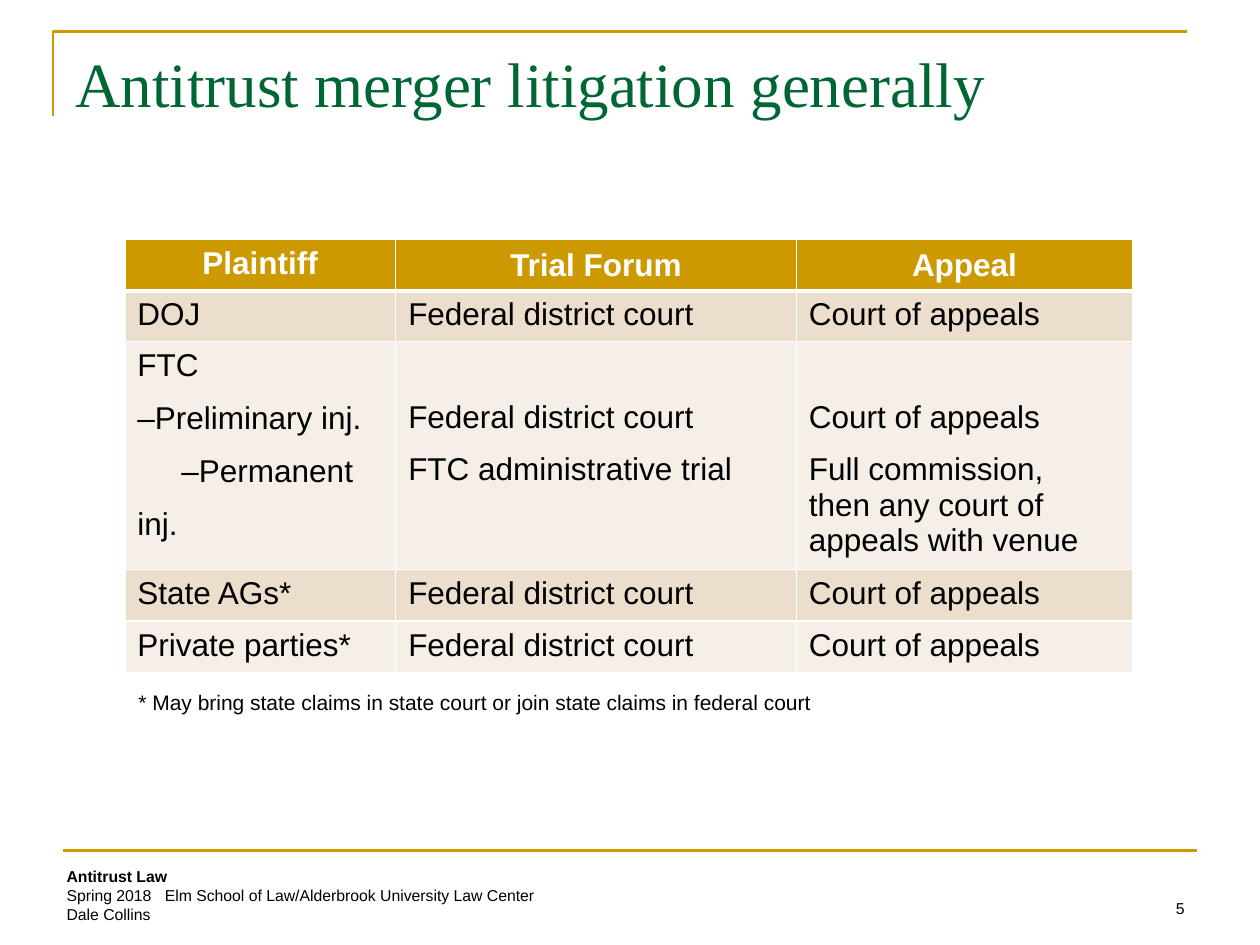
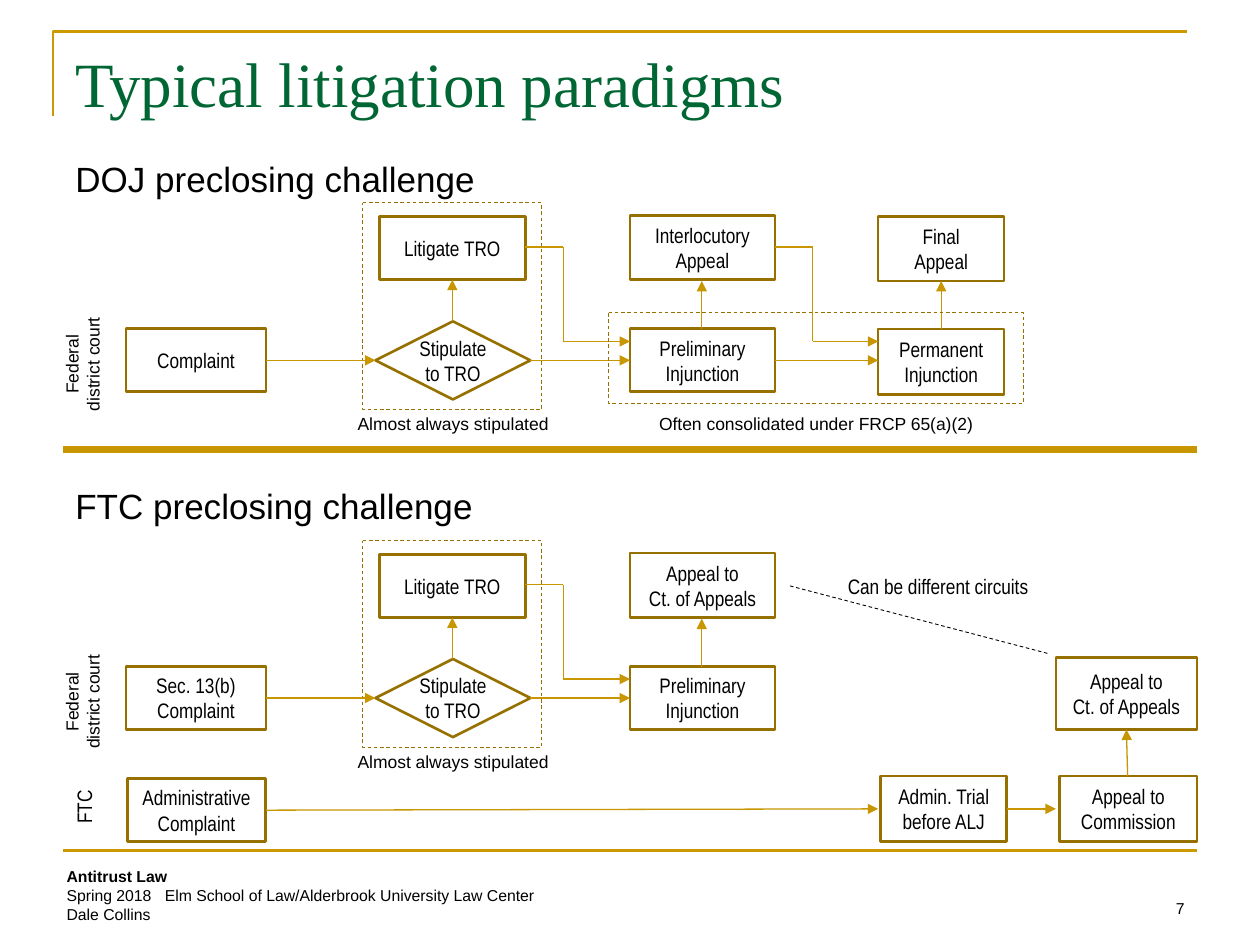
from itertools import pairwise

from lxml import etree
from pptx import Presentation
from pptx.dml.color import RGBColor
from pptx.enum.dml import MSO_LINE
from pptx.enum.shapes import MSO_CONNECTOR, MSO_SHAPE
from pptx.enum.text import MSO_ANCHOR, PP_ALIGN
from pptx.oxml.ns import qn
from pptx.util import Inches, Pt

GOLD = RGBColor(0xCC, 0x99, 0x00)
ARROW_GOLD = RGBColor(0xC8, 0x96, 0x00)
DARK_GOLD = RGBColor(0x97, 0x71, 0x00)
GREEN = RGBColor(0x00, 0x66, 0x33)
BLACK = RGBColor(0x00, 0x00, 0x00)
WHITE = RGBColor(0xFF, 0xFF, 0xFF)
BANDS = (RGBColor(0xEC, 0xDE, 0xCC), RGBColor(0xF6, 0xEF, 0xE7))

BODY = {"name": "Arial", "size": Pt(18), "color": BLACK, "bold": False}
TITLE = BODY | {"name": "Times New Roman", "size": Pt(36), "color": GREEN}
TABLE_HEAD = BODY | {"color": WHITE, "bold": True}
HEADING = BODY | {"size": Pt(20)}
FOOTNOTE = BODY | {"size": Pt(12)}
CAPTION = BODY | {"size": Pt(10)}
FOOTER = BODY | {"size": Pt(9)}
STEP = FOOTNOTE | {"name": "Arial Narrow"}

COURT, APPEALS = "Federal district court", "Court of appeals"
APPEAL_TO_COURT = "Appeal to\vCt. of Appeals"


def add_sub(parent, tag, **attributes):
    return etree.SubElement(parent, qn(tag), {key: str(value) for key, value in attributes.items()})


def write_span(para, text, style):
    """Write text in a paragraph; a vertical tab breaks the line."""
    for index, piece in enumerate(text.split("\v")):
        if index:
            para.add_line_break()
        span = para.add_run()
        span.text = piece
        for name, value in style.items():
            if name == "color":
                span.font.color.rgb = value
            else:
                setattr(span.font, name, value)


def add_text(slide, text, at, style, align=PP_ALIGN.LEFT, anchor=MSO_ANCHOR.TOP, wrap=True, rotation=0):
    box = slide.shapes.add_textbox(*map(Inches, at))
    box.rotation = rotation
    frame = box.text_frame
    frame.word_wrap = wrap
    frame.vertical_anchor = anchor
    frame.paragraphs[0].alignment = align
    write_span(frame.paragraphs[0], text, style)
    return box


def add_line(slide, start, end, color=ARROW_GOLD, width=0.75, arrow=False, dashed=False):
    line = slide.shapes.add_connector(MSO_CONNECTOR.STRAIGHT, *map(Inches, start + end))
    line.line.color.rgb = color
    line.line.width = Pt(width)
    if dashed:
        line.line.dash_style = MSO_LINE.DASH
    if arrow:
        add_sub(line.line._get_or_add_ln(), "a:tailEnd", type="triangle")
    add_sub(line._element.spPr, "a:effectLst")


def add_arrow(slide, *points):
    """Join the points with lines; the last one has an arrowhead."""
    for start, end in pairwise(points):
        add_line(slide, start, end, arrow=end == points[-1])


def add_outline(slide, at, kind=MSO_SHAPE.FLOWCHART_PROCESS, width=1.5, dashed=False):
    shape = slide.shapes.add_shape(kind, *map(Inches, at))
    shape.shadow.inherit = False
    shape.fill.background()
    shape.line.color.rgb = DARK_GOLD
    shape.line.width = Pt(width)
    if dashed:
        shape.line.dash_style = MSO_LINE.DASH
    return shape


def add_step(slide, text, at, kind=MSO_SHAPE.FLOWCHART_PROCESS):
    frame = add_outline(slide, at, kind).text_frame
    frame.word_wrap = False
    frame.vertical_anchor = MSO_ANCHOR.MIDDLE
    for side in ("left", "right", "top", "bottom"):
        setattr(frame, f"margin_{side}", 0)
    frame.paragraphs[0].alignment = PP_ALIGN.CENTER
    write_span(frame.paragraphs[0], text, STEP)


def add_dashed_group(slide, at, caption, caption_at):
    add_outline(slide, at, width=0.5, dashed=True)
    add_text(slide, caption, caption_at, CAPTION, PP_ALIGN.CENTER)


def add_page(deck, title, number):
    """Add a slide with the corner bracket, title, footer rule and footer."""
    slide = deck.slides.add_slide(deck.slide_layouts[6])
    outline = slide.shapes.build_freeform(Inches(0.42), Inches(0.92))
    corner, end = (Inches(0.42), Inches(0.25)), (Inches(9.42), Inches(0.25))
    outline.add_line_segments([corner, end], close=False)
    bracket = outline.convert_to_shape()
    bracket.shadow.inherit = False
    bracket.fill.background()
    bracket.line.color.rgb = GOLD
    bracket.line.width = Pt(1.5)
    add_line(slide, (0.5, 6.75), (9.5, 6.75), GOLD, 1.5)

    footer = add_text(slide, "Antitrust Law", (0.43, 6.83, 4.67, 0.56), FOOTER | {"bold": True})
    para = footer.text_frame.add_paragraph()
    write_span(para, "Spring 2018\tElm School of Law/Alderbrook University Law Center", FOOTER)
    stops = add_sub(para._p.get_or_add_pPr(), "a:tabLst")
    add_sub(stops, "a:tab", pos=Inches(0.78), algn="l")
    write_span(footer.text_frame.add_paragraph(), "Dale Collins", FOOTER)

    add_text(slide, title, (0.5, 0.3, 9, 0.78), TITLE)
    add_text(slide, number, (7.17, 6.83, 2.33, 0.5), FOOTER, PP_ALIGN.RIGHT, MSO_ANCHOR.BOTTOM)
    return slide


def set_borders(cell, bottom):
    properties = cell._tc.get_or_add_tcPr()
    widths = {"a:lnL": 1, "a:lnR": 1, "a:lnT": 1, "a:lnB": bottom}
    for index, (tag, width) in enumerate(widths.items()):
        line = add_sub(properties, tag, w=Pt(width))
        add_sub(add_sub(line, "a:solidFill"), "a:srgbClr", val=WHITE)
        properties.insert(index, line)


def fill_cell(cell, paragraphs, style, fill, align=PP_ALIGN.LEFT, bottom=1):
    """Write (text, line spacing) pairs in a cell and colour it."""
    cell.fill.solid()
    cell.fill.fore_color.rgb = fill
    set_borders(cell, bottom)
    frame = cell.text_frame
    for index, (text, spacing) in enumerate(paragraphs):
        para = frame.add_paragraph() if index else frame.paragraphs[0]
        para.alignment = align
        para.line_spacing = spacing
        write_span(para, text, style)


def add_forum_table(slide):
    header = ("Plaintiff", "Trial Forum", "Appeal")
    ftc = (
        [("FTC", 1.0), ("–Preliminary inj.", 1.5), ("–Permanent\vinj.", 1.5)],
        [(COURT, 1.0), ("FTC administrative trial", 1.5)],
        [(APPEALS, 1.0), ("Full commission,", 1.5), ("then any court of appeals with venue", 1.0)],
    )
    plain = [[[(text, 1.0)] for text in (plaintiff, COURT, APPEALS)]
             for plaintiff in ("DOJ", "State AGs*", "Private parties*")]
    rows = [plain[0], ftc, *plain[1:]]
    heights = (0.41, 0.39, 1.78, 0.41, 0.41)

    frame = slide.shapes.add_table(5, 3, Inches(0.99), Inches(1.9), Inches(8), Inches(sum(heights)))
    table = frame.table
    for column, width in zip(table.columns, (2.15, 3.18, 2.67)):
        column.width = Inches(width)
    for row, height in zip(table.rows, heights):
        row.height = Inches(height)
    for index, text in enumerate(header):
        cell = table.cell(0, index)
        fill_cell(cell, [(text, 1.0)], TABLE_HEAD, GOLD, PP_ALIGN.CENTER, 3)
        cell.vertical_anchor = MSO_ANCHOR.MIDDLE if index else MSO_ANCHOR.TOP
    for number, row in enumerate(rows):
        for index, paragraphs in enumerate(row):
            fill_cell(table.cell(number + 1, index), paragraphs, BODY, BANDS[number % 2])

    for index in (1, 2):
        cell = table.cell(2, index)
        cell.margin_top = Inches(0.46)
        cell.margin_bottom = 0
    permanent = table.cell(2, 0).text_frame.paragraphs[2]
    permanent._p.get_or_add_pPr().set("indent", str(Inches(0.35)))


def add_challenge(slide, top, complaint, appeal):
    """Draw the steps that both agencies share, down from top."""
    middle = top + 1.25
    add_text(slide, "Federal\vdistrict court", (0.16, top + 1.06, 0.99, 0.44), CAPTION,
             PP_ALIGN.CENTER, rotation=270)
    add_dashed_group(slide, (2.88, top, 1.42, 1.64), "Almost always stipulated",
                     (2.7, top + 1.62, 1.79, 0.27))
    add_step(slide, complaint, (1, top + 1, 1.11, 0.5))
    add_step(slide, "Stipulate\vto TRO", (2.98, top + 0.94, 1.23, 0.62), MSO_SHAPE.DIAMOND)
    add_step(slide, "Litigate TRO", (3.01, top + 0.11, 1.16, 0.5))
    add_step(slide, "Preliminary\vInjunction", (5, top + 1, 1.15, 0.5))
    add_step(slide, appeal, (5, top + 0.1, 1.15, 0.51))
    add_arrow(slide, (2.11, middle), (2.98, middle))
    add_arrow(slide, (4.21, middle), (5, middle))
    add_arrow(slide, (3.59, top + 0.94), (3.59, top + 0.61))
    add_arrow(slide, (5.57, top + 1), (5.57, top + 0.62))
    add_arrow(slide, (4.17, top + 0.35), (4.47, top + 0.35), (4.47, top + 1.1), (5, top + 1.1))


def add_permanent_injunction(slide):
    add_step(slide, "Permanent\vInjunction", (6.97, 2.61, 1, 0.52))
    add_step(slide, "Final\vAppeal", (6.97, 1.72, 1, 0.51))
    add_arrow(slide, (6.15, 2.86), (6.97, 2.86))
    add_arrow(slide, (7.47, 2.61), (7.47, 2.23))
    add_arrow(slide, (6.15, 1.96), (6.45, 1.96), (6.45, 2.71), (6.97, 2.71))
    add_dashed_group(slide, (4.83, 2.48, 3.29, 0.72), "Often consolidated under FRCP 65(a)(2)",
                     (4.83, 3.23, 3.29, 0.27))


def add_administrative_track(slide):
    add_text(slide, "FTC", (0.43, 6.25, 0.47, 0.3), STEP, wrap=False, rotation=270)
    add_step(slide, "Administrative\vComplaint", (1.01, 6.18, 1.1, 0.5))
    add_step(slide, "Admin. Trial\vbefore ALJ", (6.99, 6.16, 1, 0.52))
    add_step(slide, "Appeal to\vCommission", (8.41, 6.16, 1.09, 0.52))
    add_step(slide, APPEAL_TO_COURT, (8.38, 5.22, 1.12, 0.57))
    add_arrow(slide, (2.11, 6.43), (6.97, 6.42))
    add_arrow(slide, (7.99, 6.42), (8.38, 6.42))
    add_arrow(slide, (8.95, 6.16), (8.94, 5.79))
    add_line(slide, (6.27, 4.65), (8.33, 5.19), BLACK, 0.5, dashed=True)
    add_text(slide, "Can be different circuits", (6.63, 4.5, 1.69, 0.3), STEP, wrap=False)


def main():
    deck = Presentation()
    deck.slide_width, deck.slide_height = Inches(10), Inches(7.5)

    forums = add_page(deck, "Antitrust merger litigation generally", "5")
    add_forum_table(forums)
    add_text(forums, "* May bring state claims in state court or join state claims in federal court",
             (1, 5.42, 5.61, 0.3), FOOTNOTE)

    paradigms = add_page(deck, "Typical litigation paradigms", "7")
    for agency, top in (("DOJ", 1.2), ("FTC", 3.8)):
        add_text(paradigms, f"{agency} preclosing challenge", (0.5, top, 3.4, 0.44), HEADING, wrap=False)
    add_challenge(paradigms, 1.61, "Complaint", "Interlocutory\vAppeal")
    add_permanent_injunction(paradigms)
    add_line(paradigms, (0.5, 3.57), (9.5, 3.57), width=4)
    add_challenge(paradigms, 4.29, "Sec. 13(b)\vComplaint", APPEAL_TO_COURT)
    add_administrative_track(paradigms)
    deck.save("out.pptx")


if __name__ == "__main__":
    main()
